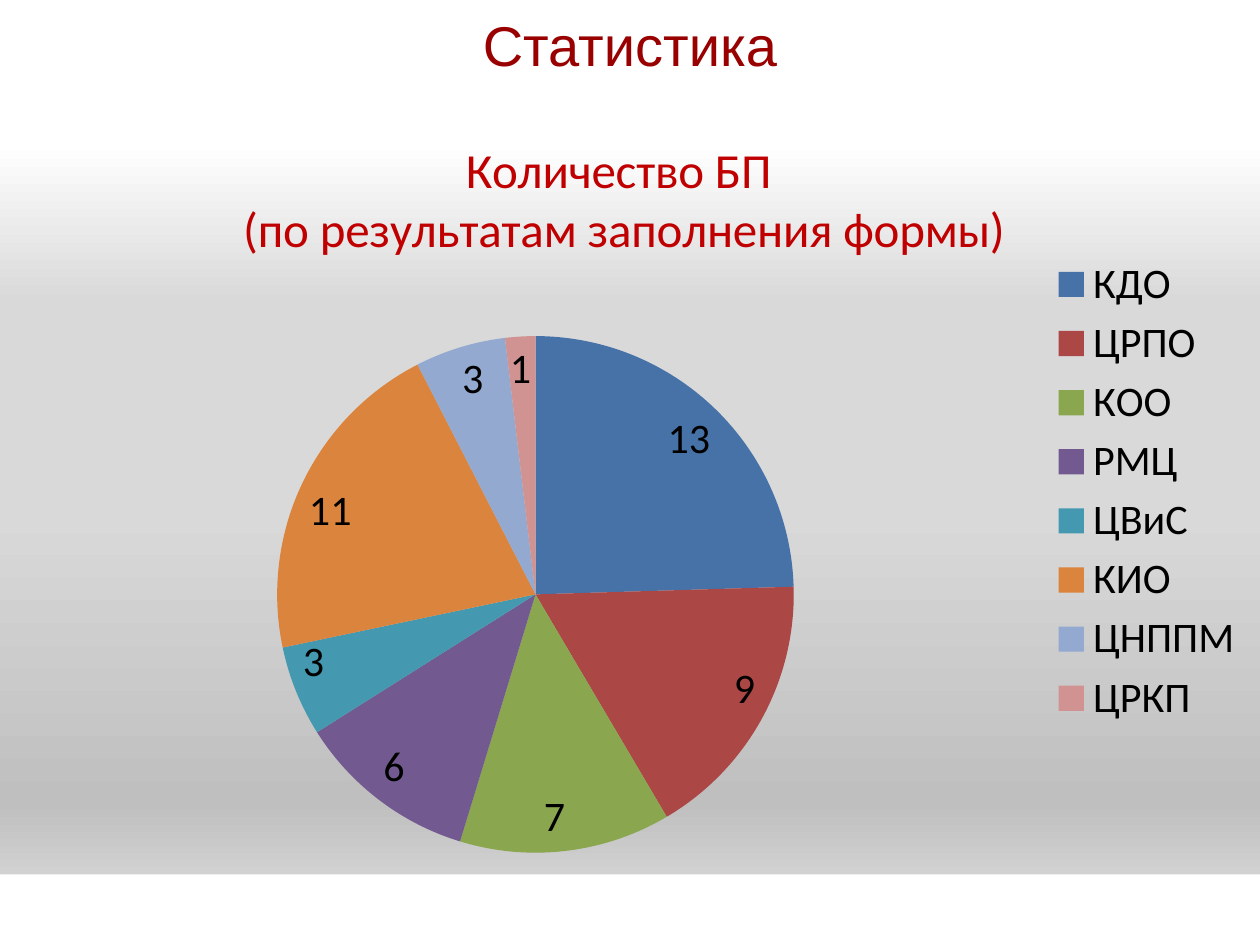
from lxml import etree
from pptx import Presentation
from pptx.chart.data import CategoryChartData
from pptx.dml.color import RGBColor
from pptx.enum.chart import XL_CHART_TYPE, XL_LABEL_POSITION, XL_LEGEND_POSITION
from pptx.enum.shapes import MSO_SHAPE
from pptx.enum.text import MSO_ANCHOR, PP_ALIGN
from pptx.oxml import parse_xml
from pptx.oxml.ns import nsdecls, qn
from pptx.util import Inches, Pt

PIE, RECTANGLE = XL_CHART_TYPE.PIE, MSO_SHAPE.RECTANGLE
RIGHT, INSIDE_END = XL_LEGEND_POSITION.RIGHT, XL_LABEL_POSITION.INSIDE_END
MIDDLE, CENTER = MSO_ANCHOR.MIDDLE, PP_ALIGN.CENTER

WIDTH, HEIGHT = 10, 7.5
TITLE_BOX = (0, 0, WIDTH, 0.7)
CHART_BOX = (0, 0.84, WIDTH, 6.06)
FOOTER_BOX = (0, 6.94, WIDTH, 0.56)

BACKGROUND_STOPS = [(0, "FFFFFF"), (15, "FFFFFF"), (32, "D9D9D9"),
                    (54, "D9D9D9"), (85, "BFBFBF"), (100, "E6E6E6")]
DEPARTMENTS = [("КДО", 13, "4672A8"), ("ЦРПО", 9, "AB4744"),
               ("КОО", 7, "8AA64F"), ("РМЦ", 6, "725A90"),
               ("ЦВиС", 3, "4499B0"), ("КИО", 11, "DB843D"),
               ("ЦНППМ", 3, "93A9CF"), ("ЦРКП", 1, "D09392")]
CHART_TITLE = ["Количество БП ", "(по результатам заполнения формы)"]


def colour(value):
    return RGBColor.from_string(value)


def inches(box):
    return [Inches(length) for length in box]


def format_font(font, name, size, shade):
    values = {"name": name, "size": Pt(size), "bold": False}
    for key, value in values.items():
        setattr(font, key, value)
    font.color.rgb = colour(shade)


def paint_background(page):
    stops = "".join(f'<a:gs pos="{share * 1000}"><a:srgbClr val="{shade}"/></a:gs>'
                    for share, shade in BACKGROUND_STOPS)
    background = parse_xml(
        f'<p:bg {nsdecls("p", "a")}><p:bgPr><a:gradFill rotWithShape="1">'
        f'<a:gsLst>{stops}</a:gsLst><a:lin ang="5400000" scaled="0"/>'
        '</a:gradFill><a:effectLst/></p:bgPr></p:bg>')
    page.element.cSld.insert(0, background)


def white_band(page, box):
    band = page.shapes.add_shape(RECTANGLE, *inches(box))
    band.shadow.inherit = False
    band.fill.solid()
    band.fill.fore_color.rgb = colour("FFFFFF")
    band.line.fill.background()


def place_title(page, box):
    title = page.shapes.title
    title.left, title.top, title.width, title.height = inches(box)
    title.fill.solid()
    title.fill.fore_color.rgb = colour("FFFFFF")
    title.text_frame.vertical_anchor = MIDDLE
    para = title.text_frame.paragraphs[0]
    para.alignment = CENTER
    span = para.add_run()
    span.text = "Статистика"
    format_font(span.font, "Arial", 32, "990000")


def set_layout(part, shares, inner=False):
    """Fix a chart part at shares (x, y and perhaps w, h) of the chart's box."""
    for old in part.findall(qn("c:layout")):
        part.remove(old)
    layout = etree.Element(qn("c:layout"))
    manual = etree.SubElement(layout, qn("c:manualLayout"))
    settings = [("layoutTarget", "inner")] if inner else []
    settings += [("xMode", "edge"), ("yMode", "edge")]
    settings += zip("xywh", shares)
    for tag, value in settings:
        etree.SubElement(manual, qn(f"c:{tag}")).set("val", str(value))
    before = part.find(qn("c:tx"))
    if before is None:
        before = part.find(qn("c:legendPos"))
    if before is None:
        part.insert(0, layout)
    else:
        before.addnext(layout)


def title_chart(chart):
    frame = chart.chart_title.text_frame
    for number, line in enumerate(CHART_TITLE):
        para = frame.add_paragraph() if number else frame.paragraphs[0]
        para.alignment = CENTER
        span = para.add_run()
        span.text = line
        format_font(span.font, "Calibri", 28, "C00000")
    chart.chart_title.include_in_layout = False


def pie_chart(page, box):
    names, counts, shades = zip(*DEPARTMENTS)
    data = CategoryChartData()
    data.categories = names
    data.add_series("Series 1", counts)
    chart = page.shapes.add_chart(PIE, *inches(box), data).chart
    format_font(chart.font, "Calibri", 24, "000000")
    title_chart(chart)

    chart.has_legend = True
    chart.legend.position = RIGHT
    chart.legend.include_in_layout = False

    plot = chart.plots[0]
    plot.vary_by_categories = True
    for number, shade in enumerate(shades):
        fill = plot.series[0].points[number].format.fill
        fill.solid()
        fill.fore_color.rgb = colour(shade)
    plot.has_data_labels = True
    labels = plot.data_labels
    labels.show_value = True
    labels.show_percentage = False
    labels.position = INSIDE_END
    format_font(labels.font, "Calibri", 24, "000000")

    area = chart.element.find(qn("c:chart"))
    set_layout(area.find(qn("c:title")), (0.19, 0.04))
    set_layout(area.find(qn("c:plotArea")), (0.22, 0.3, 0.41, 0.68), inner=True)
    set_layout(area.find(qn("c:legend")), (0.83, 0.19, 0.16, 0.63))


def main():
    deck = Presentation()
    deck.slide_width, deck.slide_height = Inches(WIDTH), Inches(HEIGHT)
    page = deck.slides.add_slide(deck.slide_layouts[5])
    paint_background(page)
    white_band(page, FOOTER_BOX)
    place_title(page, TITLE_BOX)
    pie_chart(page, CHART_BOX)
    deck.save("out.pptx")


if __name__ == "__main__":
    main()
